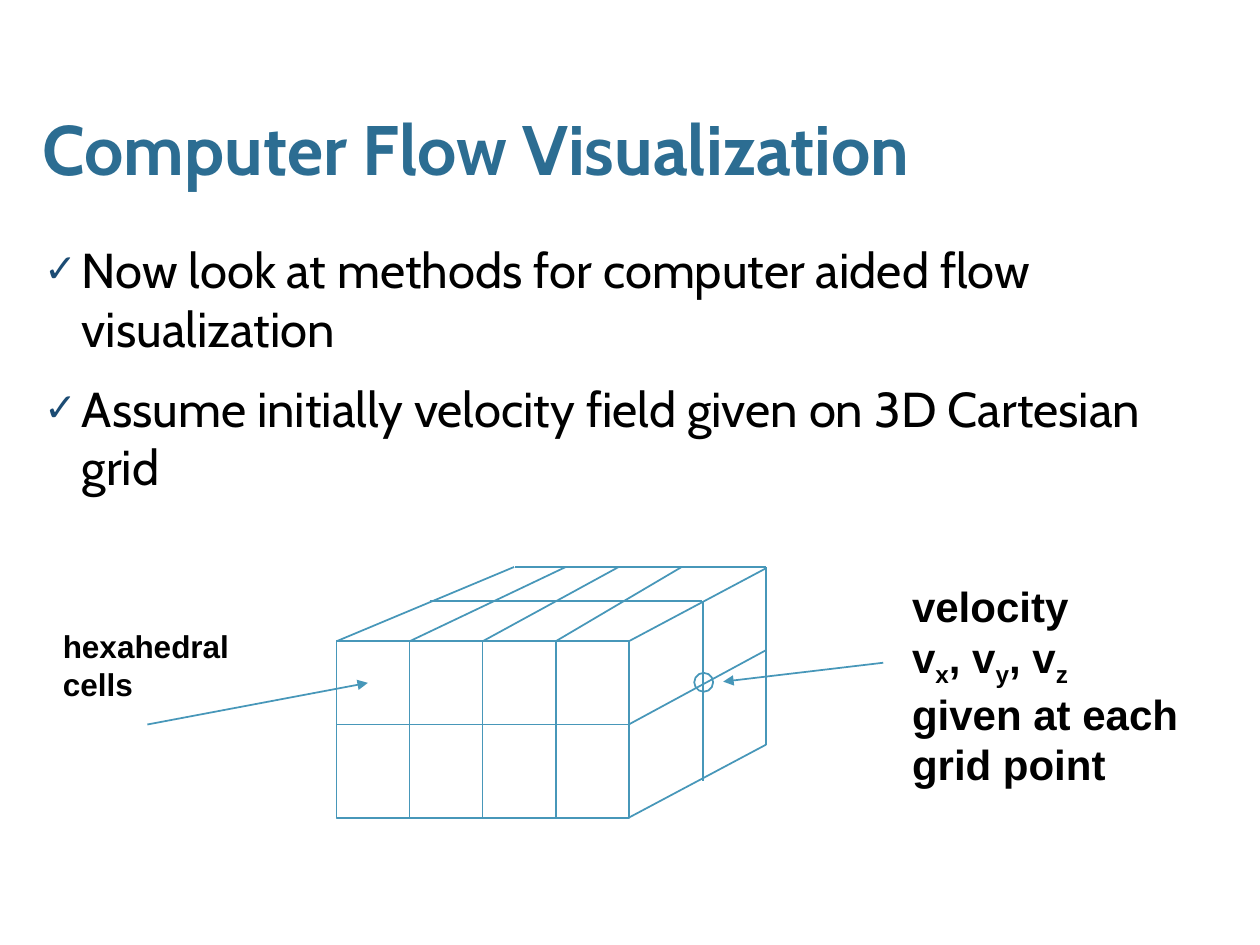
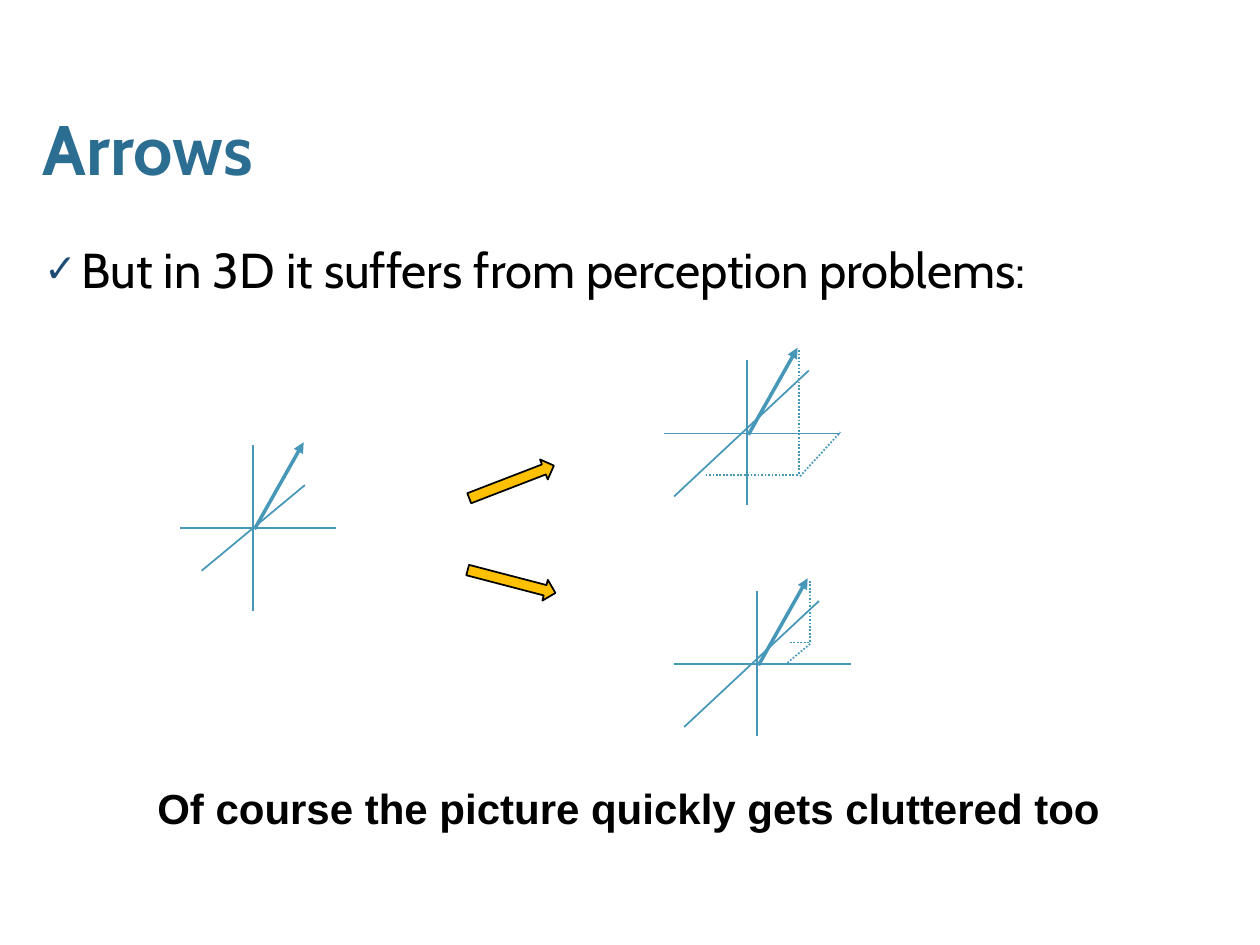
from lxml import etree
from pptx import Presentation
from pptx.dml.color import RGBColor
from pptx.enum.dml import MSO_LINE
from pptx.enum.shapes import MSO_CONNECTOR, MSO_SHAPE
from pptx.enum.text import MSO_ANCHOR, MSO_AUTO_SIZE, PP_ALIGN
from pptx.oxml.ns import qn
from pptx.util import Emu, Pt

PX = 9144  # 100 px to the inch
COLOURS = {
    "title": "2C6D92",
    "text": "000000",
    "check": "1C4C74",
    "line": "4797B9",
    "arrow": "FFC000",
    "arrow_edge": "000000",
}
HEADING_FONT, LABEL_FONT = "Cabin", "Arial"


def px(*lengths):
    return [Emu(length * PX) for length in lengths]


def rgb(name):
    return RGBColor.from_string(COLOURS[name])


# Text
def write(frame, paragraphs, font=LABEL_FONT, size=24, colour="text", bold=False,
          anchor=MSO_ANCHOR.TOP, inset=10, line_spacing=1.0, before=0, after=0):
    """Fill a frame; a paragraph is a string or a list of (text, is_subscript)."""
    frame.word_wrap = True
    frame.auto_size = MSO_AUTO_SIZE.NONE
    frame.vertical_anchor = anchor
    frame.margin_left, frame.margin_right = px(inset, inset)
    frame.margin_top, frame.margin_bottom = px(5, 5)
    for index, content in enumerate(paragraphs):
        paragraph = frame.add_paragraph() if index else frame.paragraphs[0]
        paragraph.alignment = PP_ALIGN.LEFT
        paragraph.line_spacing = line_spacing
        paragraph.space_before = Pt(before if index else 0)
        paragraph.space_after = Pt(after)
        parts = [(content, False)] if isinstance(content, str) else content
        for text, is_subscript in parts:
            run = paragraph.add_run()
            run.text = text
            run.font.name = font
            run.font.size = Pt(size)
            run.font.bold = bold
            run.font.color.rgb = rgb(colour)
            if is_subscript:
                run._r.get_or_add_rPr().set("baseline", "-25000")


def add_check_bullet(paragraph):
    properties = paragraph._p.get_or_add_pPr()
    properties.set("marL", str(30 * PX))
    properties.set("indent", str(-30 * PX))
    colour = etree.SubElement(properties, qn("a:buClr"))
    etree.SubElement(colour, qn("a:srgbClr"), val=COLOURS["check"])
    etree.SubElement(properties, qn("a:buSzPct"), val="80000")
    etree.SubElement(properties, qn("a:buChar"), char="✓")


def place(placeholder, left, top, width, height):
    placeholder.left, placeholder.top, placeholder.width, placeholder.height = px(
        left, top, width, height)


def add_content_slide(deck, title, points):
    slide = deck.slides.add_slide(deck.slide_layouts[1])
    heading, body = slide.placeholders
    place(heading, 34, 84, 931, 73)
    write(heading.text_frame, [title], font=HEADING_FONT, size=40, colour="title",
          bold=True, anchor=MSO_ANCHOR.MIDDLE, inset=0, line_spacing=0.95)
    place(body, 35, 185, 932, 494)
    write(body.text_frame, points, font=HEADING_FONT, size=28, inset=0, before=3, after=9)
    for paragraph in body.text_frame.paragraphs:
        add_check_bullet(paragraph)
    return slide


def add_label(slide, box, paragraphs, size=24):
    label = slide.shapes.add_textbox(*px(*box))
    write(label.text_frame, paragraphs, size=size, bold=True)


# Lines and shapes
def add_line(slide, start, end, weight=1, dotted=False, arrow=False):
    connector = slide.shapes.add_connector(MSO_CONNECTOR.STRAIGHT, *px(*start, *end))
    connector.line.color.rgb = rgb("line")
    connector.line.width = Pt(weight)
    if dotted:
        connector.line.dash_style = MSO_LINE.ROUND_DOT
    if arrow:
        etree.SubElement(connector.line._get_or_add_ln(), qn("a:tailEnd"), type="triangle")
    etree.SubElement(connector._element.spPr, qn("a:effectLst"))


def add_outline(slide, kind, box, fill=None, line="line", rotation=0):
    shape = slide.shapes.add_shape(kind, *px(*box))
    shape.shadow.inherit = False
    if fill:
        shape.fill.solid()
        shape.fill.fore_color.rgb = rgb(fill)
    else:
        shape.fill.background()
    shape.line.color.rgb = rgb(line)
    shape.line.width = Pt(1)
    shape.rotation = rotation


# Cartesian grid
def draw_hexahedral_grid(slide):
    left, top, width, height, columns = 267, 509, 232, 140, 4
    right, bottom, cell = left + width, top + height, width // columns
    back_top, back_right, back_bottom = 450, 608, 591
    middle_row = 575
    add_outline(slide, MSO_SHAPE.RECTANGLE, (left, top, width, height))

    # Front columns and the edges that run back across the top
    for column, back_x in enumerate((408, 449, 491, 541)):
        x = left + column * cell
        add_line(slide, (x, top), (back_x, back_top))
        if column:
            add_line(slide, (x, top), (x, bottom))
    add_line(slide, (left, middle_row), (right, middle_row))

    # Top and back edges
    add_line(slide, (409, back_top), (back_right, back_top))
    add_line(slide, (341, 477), (557, 477))
    add_line(slide, (back_right, back_top), (back_right, back_bottom))

    # Right side
    for front_y, back_y in ((top, 451), (middle_row, 516), (bottom, back_bottom)):
        add_line(slide, (right, front_y), (back_right, back_y))
    add_line(slide, (558, 477), (558, 620))

    # Grid point
    add_outline(slide, MSO_SHAPE.OVAL, (551, 534, 15, 15))


# Vector on three axes
def draw_vector(slide, origin, vertical, horizontal, depth, projection=()):
    def line(start, end, **style):
        add_line(slide, *[(origin[0] + x, origin[1] + y) for x, y in (start, end)], **style)

    line((0, vertical[0]), (0, vertical[1]))
    line((horizontal[0], 0), (horizontal[1], 0))
    line(*depth)
    line((1, 1), (40, -68), weight=2, arrow=True)
    for start, end in projection:
        line(start, end, dotted=True)


def build_grid_slide(deck):
    slide = add_content_slide(deck, "Computer Flow Visualization", [
        "Now look at methods for computer aided flow visualization",
        "Assume initially velocity field given on 3D Cartesian grid",
    ])
    components = [("v", False), ("x", True), (", v", False), ("y", True),
                  (", v", False), ("z", True)]
    add_label(slide, (714, 456, 255, 169),
              ["velocity", components, "given at each", "grid point"])
    add_label(slide, (40, 493, 175, 77), ["hexahedral", "cells"], size=18)
    draw_hexahedral_grid(slide)
    add_line(slide, (701, 526), (574, 541), arrow=True)
    add_line(slide, (117, 575), (292, 542), arrow=True)


def build_arrows_slide(deck):
    slide = add_content_slide(deck, "Arrows",
                              ["But in 3D it suffers from perception problems:"])
    draw_vector(slide, (201, 419), (-66, 66), (-58, 66), ((-41, 34), (41, -34)))

    # Two readings of the same vector
    near = [((-33, 33), (41, 33)), ((42, 34), (74, -1)), ((41, -66), (41, 32))]
    far = [((26, -17), (41, -17)), ((42, -16), (24, -1)), ((42, -66), (42, -17))]
    for origin, projection in (((593, 344), near), ((601, 527), far)):
        draw_vector(slide, origin, (-58, 57), (-66, 74), ((-58, 50), (49, -50)), projection)

    add_label(slide, (115, 616, 780, 50),
              ["Of course the picture quickly gets cluttered too"])
    for top, rotation in ((374, 338.9), (453, 14.6)):
        add_outline(slide, MSO_SHAPE.RIGHT_ARROW, (370, top, 72, 17),
                    fill="arrow", line="arrow_edge", rotation=rotation)


def main():
    deck = Presentation()
    deck.slide_width, deck.slide_height = px(1000, 750)
    build_grid_slide(deck)
    build_arrows_slide(deck)
    deck.save("out.pptx")


if __name__ == "__main__":
    main()
